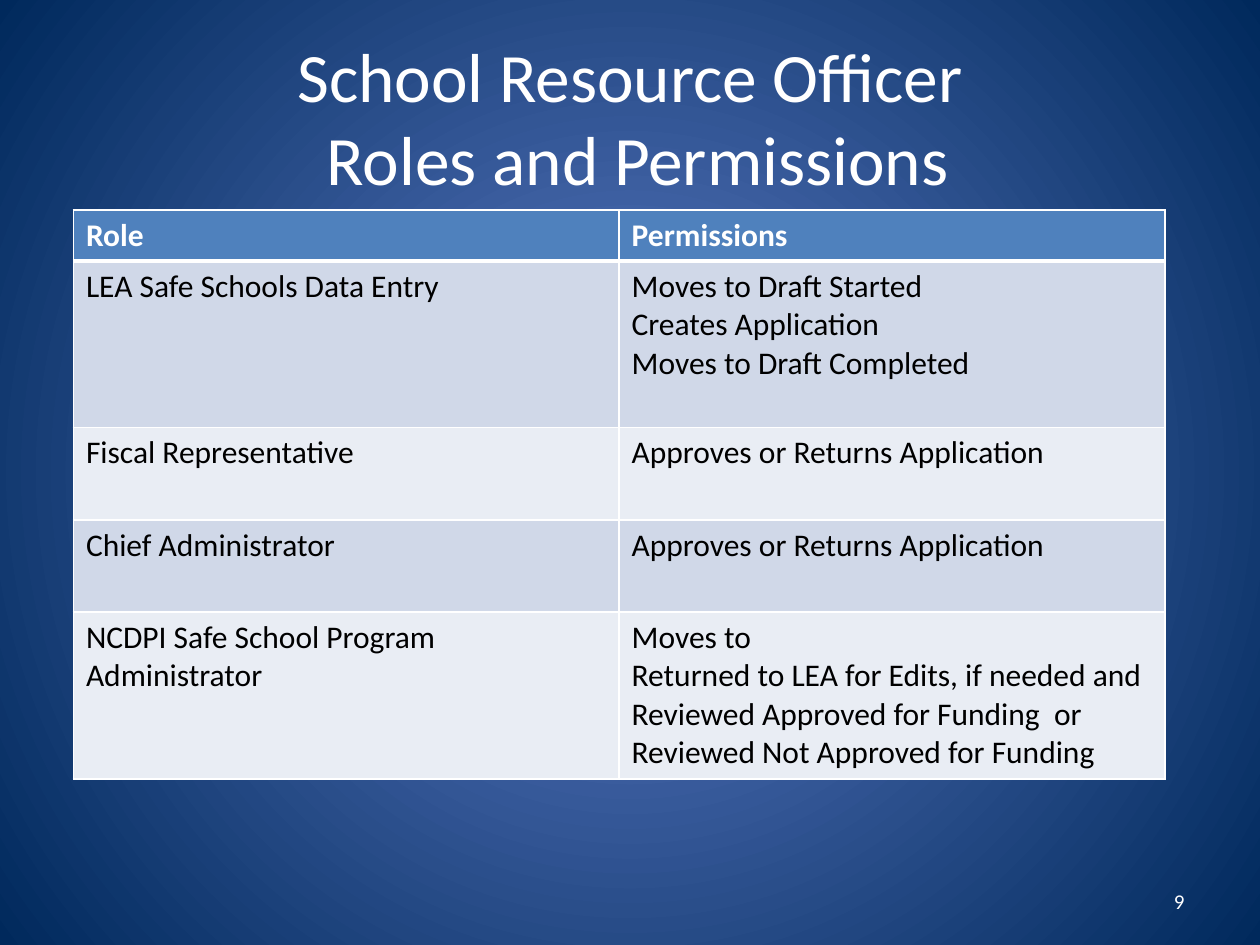
"""Build the School Resource Officer roles and permissions slide."""
from lxml import etree
from pptx import Presentation
from pptx.dml.color import RGBColor
from pptx.enum.text import MSO_ANCHOR, MSO_AUTO_SIZE, PP_ALIGN
from pptx.oxml import parse_xml
from pptx.oxml.ns import nsdecls, qn
from pptx.util import Cm, Pt

MIDDLE = MSO_ANCHOR.MIDDLE
NO_FIT = MSO_AUTO_SIZE.NONE
CENTER, LEFT, RIGHT = PP_ALIGN.CENTER, PP_ALIGN.LEFT, PP_ALIGN.RIGHT

COLORS = {
    "glow": "5E7CC5", "navy": "00295C", "white": "FFFFFF", "black": "000000",
    "header": "4F81BD", "band_dark": "D0D8E8", "band_light": "E9EDF4",
}
ROWS = [
    ("Role", "Permissions"),
    ("LEA Safe Schools Data Entry",
     "Moves to Draft Started\nCreates Application\nMoves to Draft Completed"),
    ("Fiscal Representative", "Approves or Returns Application"),
    ("Chief Administrator", "Approves or Returns Application"),
    ("NCDPI Safe School Program Administrator",
     "Moves to\nReturned to LEA for Edits, if needed and\n"
     "Reviewed Approved for Funding  or Reviewed Not Approved for Funding"),
]
ROW_HEIGHTS = [1.02, 3.36, 1.86, 1.86, 3.36]


def write(tf, text, size, color, align, bold=False):
    tf.text = text
    font = {"name": "Calibri", "size": Pt(size), "bold": bold}
    for p in tf.paragraphs:
        p.alignment = align
        for r in p.runs:
            for key, value in font.items():
                setattr(r.font, key, value)
            r.font.color.rgb = RGBColor.from_string(COLORS[color])


def add_borders(cell, widths):
    tc_pr = cell._tc.get_or_add_tcPr()
    for side, width in widths.items():
        tc_pr.append(parse_xml(
            f'<a:ln{side} {nsdecls("a")} w="{Pt(width)}"><a:solidFill>'
            f'<a:srgbClr val="{COLORS["white"]}"/></a:solidFill></a:ln{side}>'))


prs = Presentation()
prs.slide_width, prs.slide_height = Cm(25.4), Cm(19.05)
s = prs.slides.add_slide(prs.slide_layouts[5])

fill = s.background.fill
fill.gradient()
for stop, name, position in zip(fill.gradient_stops, ("glow", "navy"), (0, 1)):
    stop.color.rgb = RGBColor.from_string(COLORS[name])
    stop.position = position
lin = s.background._cSld.find(".//" + qn("a:lin"))
grad = lin.getparent()
grad.remove(lin)
radial = etree.SubElement(grad, qn("a:path"), {"path": "circle"})
etree.SubElement(radial, qn("a:fillToRect"), dict.fromkeys("ltrb", "50000"))

title = s.shapes.title
frame = {"left": Cm(1.27), "top": Cm(0.76), "width": Cm(22.86), "height": Cm(3.18)}
for key, value in frame.items():
    setattr(title, key, value)
write(title.text_frame, "School Resource Officer\v Roles and Permissions",
      39.6, "white", CENTER)

number = s.shapes.add_textbox(Cm(18.2), Cm(17.65), Cm(5.93), Cm(1.02))
write(number.text_frame, "9", 12, "white", RIGHT)
for sp in (title, number):
    for key, value in {"word_wrap": True, "auto_size": NO_FIT,
                       "vertical_anchor": MIDDLE}.items():
        setattr(sp.text_frame, key, value)

table = s.shapes.add_table(len(ROWS), 2, Cm(1.48), Cm(4.23), Cm(22),
                           Cm(sum(ROW_HEIGHTS))).table
for col in table.columns:
    col.width = Cm(11)
for i, (texts, height) in enumerate(zip(ROWS, ROW_HEIGHTS)):
    table.rows[i].height = Cm(height)
    is_header = i == 0
    band = "header" if is_header else ("band_light", "band_dark")[i % 2]
    borders = {"L": 1, "R": 1, "T": 3 if i == 1 else 1, "B": 3 if is_header else 1}
    for j, text in enumerate(texts):
        cell = table.cell(i, j)
        write(cell.text_frame, text, 18, "white" if is_header else "black",
              LEFT, is_header)
        add_borders(cell, borders)
        cell.fill.solid()
        cell.fill.fore_color.rgb = RGBColor.from_string(COLORS[band])

prs.save("out.pptx")
